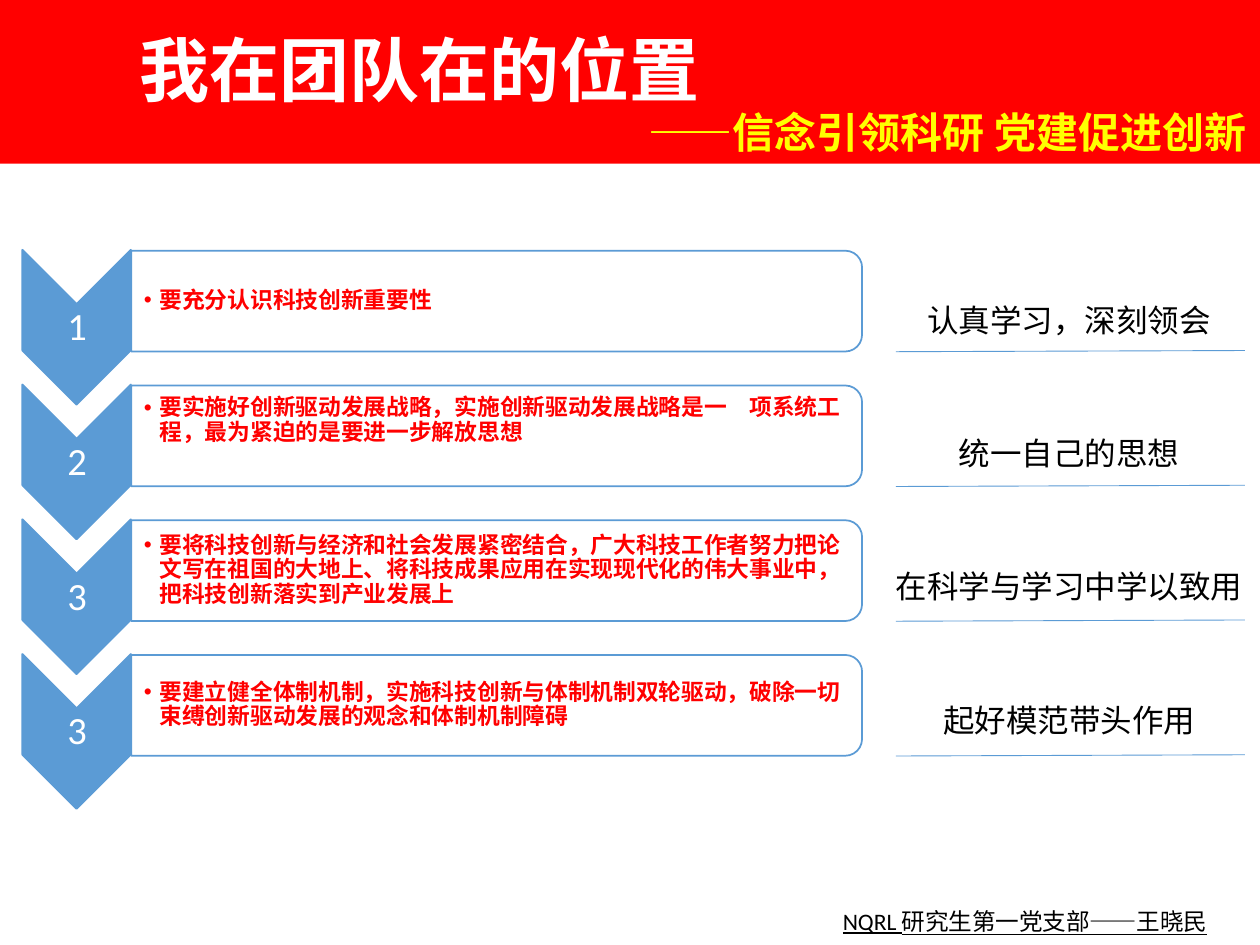
from lxml import etree
from pptx import Presentation
from pptx.dml.color import RGBColor
from pptx.enum.shapes import MSO_CONNECTOR, MSO_SHAPE
from pptx.enum.text import MSO_ANCHOR, MSO_AUTO_SIZE, PP_ALIGN
from pptx.oxml.ns import qn
from pptx.util import Pt

RECT = MSO_SHAPE.RECTANGLE
CHEVRON = MSO_SHAPE.CHEVRON
PANEL = MSO_SHAPE.ROUND_2_SAME_RECTANGLE
STRAIGHT = MSO_CONNECTOR.STRAIGHT
TOP, MIDDLE = MSO_ANCHOR.TOP, MSO_ANCHOR.MIDDLE
LEFT, CENTER = PP_ALIGN.LEFT, PP_ALIGN.CENTER
NO_FIT = MSO_AUTO_SIZE.NONE

FONT = "Calibri"
RED, BLUE, WHITE, YELLOW, BLACK = "FF0000", "5B9BD5", "FFFFFF", "FFFF00", "000000"
COMPARISON_LAYOUT = 4  # a title and four body placeholders
ROW_PITCH = 77
DEFAULT_INSETS = (7.2, 3.6, 7.2, 3.6)

# Number, statement, extra bottom inset, personal commitment
ROWS = [
    ("1", "要充分认识科技创新重要性", 0, "认真学习，深刻领会"),
    ("2", "要实施好创新驱动发展战略，实施创新驱动发展战略是一\u3000项系统工程，"
          "最为紧迫的是要进一步解放思想", 17, "统一自己的思想"),
    ("3", "要将科技创新与经济和社会发展紧密结合，广大科技工作者努力把论文写在"
          "祖国的大地上、将科技成果应用在实现现代化的伟大事业中，把科技创新落实到"
          "产业发展上", 0, "在科学与学习中学以致用"),
    ("3", "要建立健全体制机制，实施科技创新与体制机制双轮驱动，破除一切束缚创新"
          "驱动发展的观念和体制机制障碍", 0, "起好模范带头作用"),
]


def rgb(color):
    return RGBColor.from_string(color)


def write(holder, text, size, color, bold=False, align=LEFT, anchor=TOP,
          insets=DEFAULT_INSETS, wrap=True):
    frame = holder.text_frame
    frame.auto_size = NO_FIT
    frame.word_wrap = wrap
    frame.vertical_anchor = anchor
    (frame.margin_left, frame.margin_top,
     frame.margin_right, frame.margin_bottom) = map(Pt, insets)
    paragraph = frame.paragraphs[0]
    paragraph.text = text
    paragraph.alignment = align
    paragraph.space_before = Pt(0)
    font = paragraph.font
    font.name, font.size, font.bold = FONT, Pt(size), bold
    font.color.rgb = rgb(color)
    return paragraph


def add_label(slide, box, text, size, color, **style):
    label = slide.shapes.add_textbox(*map(Pt, box))
    return write(label, text, size, color, **style)


def fill_placeholder(slide, index, box, text, size, color, **style):
    holder = slide.placeholders[index]
    holder.left, holder.top, holder.width, holder.height = map(Pt, box)
    slide.shapes._spTree.append(holder._element)  # bring to front
    return write(holder, text, size, color, **style)


def add_block(slide, kind, box, fill, line=None, rotation=0, opacity=100):
    block = slide.shapes.add_shape(kind, *map(Pt, box))
    block.shadow.inherit = False
    block.rotation = rotation
    block.fill.solid()
    block.fill.fore_color.rgb = rgb(fill)
    if opacity < 100:
        color = block._element.spPr.find(qn("a:solidFill"))[0]
        etree.SubElement(color, qn("a:alpha"), val=str(opacity * 1000))
    if line:
        block.line.color.rgb = rgb(line)
        block.line.width = Pt(1)
    else:
        block.line.fill.background()


def add_rule(slide, start, end):
    rule = slide.shapes.add_connector(STRAIGHT, *map(Pt, start + end))
    rule.line.color.rgb = rgb(BLUE)
    rule.line.width = Pt(0.5)
    etree.SubElement(rule._element.spPr, qn("a:effectLst"))


def add_bullet(paragraph, indent):
    properties = paragraph._p.get_or_add_pPr()
    properties.set("marL", str(Pt(indent)))
    properties.set("indent", str(-Pt(indent)))
    etree.SubElement(properties, qn("a:buFont"), typeface="Arial")
    etree.SubElement(properties, qn("a:buChar"), char="•")
    # Bullets must come before the default run properties
    defaults = properties.find(qn("a:defRPr"))
    if defaults is not None:
        properties.append(defaults)


def add_header(slide):
    add_block(slide, RECT, (0, 0, 720, 93.6), RED)
    fill_placeholder(slide, 0, (72.7, 11.5, 417, 55.5), "我在团队在的位置",
                     40, WHITE, bold=True)
    add_label(slide, (363.6, 57.6, 356.4, 36), "——信念引领科研 党建促进创新",
              24, YELLOW, bold=True, insets=(7.2, 3.6, 0, 3.6))


def add_row(slide, index, number, statement, lift, commitment):
    offset = index * ROW_PITCH
    # Numbered chevron
    add_block(slide, CHEVRON, (-0.5, 156, 88.5, 62) if not index else
              (-0.5, 156 + offset, 88.5, 62), BLUE, BLUE, rotation=90)
    digit = add_label(slide, (13, 174 + offset, 62, 27), number, 22, WHITE,
                      align=CENTER, anchor=MIDDLE, insets=(1.4,) * 4)
    digit.line_spacing = 0.9
    # Statement panel
    add_block(slide, PANEL, (255, -36.7 + offset, 57.6, 417.6), WHITE, BLUE,
              rotation=90, opacity=90)
    point = fill_placeholder(slide, index + 1, (75, 146 + offset, 415, 52),
                             statement, 13, RED, bold=True, anchor=MIDDLE,
                             insets=(7.2, 0.7, 0.7, 0.7 + lift))
    point.line_spacing = 0.9
    add_bullet(point, 9)
    # Commitment above its rule
    add_rule(slide, (512, 201 + offset), (711.4, 200.3 + offset))
    add_label(slide, (504, 168.5 + index * 76.1, 214, 29), commitment, 18,
              BLACK, align=CENTER, wrap=False)


def main():
    deck = Presentation()
    deck.slide_width, deck.slide_height = Pt(720), Pt(540)
    slide = deck.slides.add_slide(deck.slide_layouts[COMPARISON_LAYOUT])
    add_header(slide)
    for index, row in enumerate(ROWS):
        add_row(slide, index, *row)
    signature = add_label(slide, (474.5, 514.8, 245.5, 23.8),
                          "NQRL 研究生第一党支部——王晓民", 13.5, BLACK)
    signature.font.underline = True
    deck.save("out.pptx")


if __name__ == "__main__":
    main()
